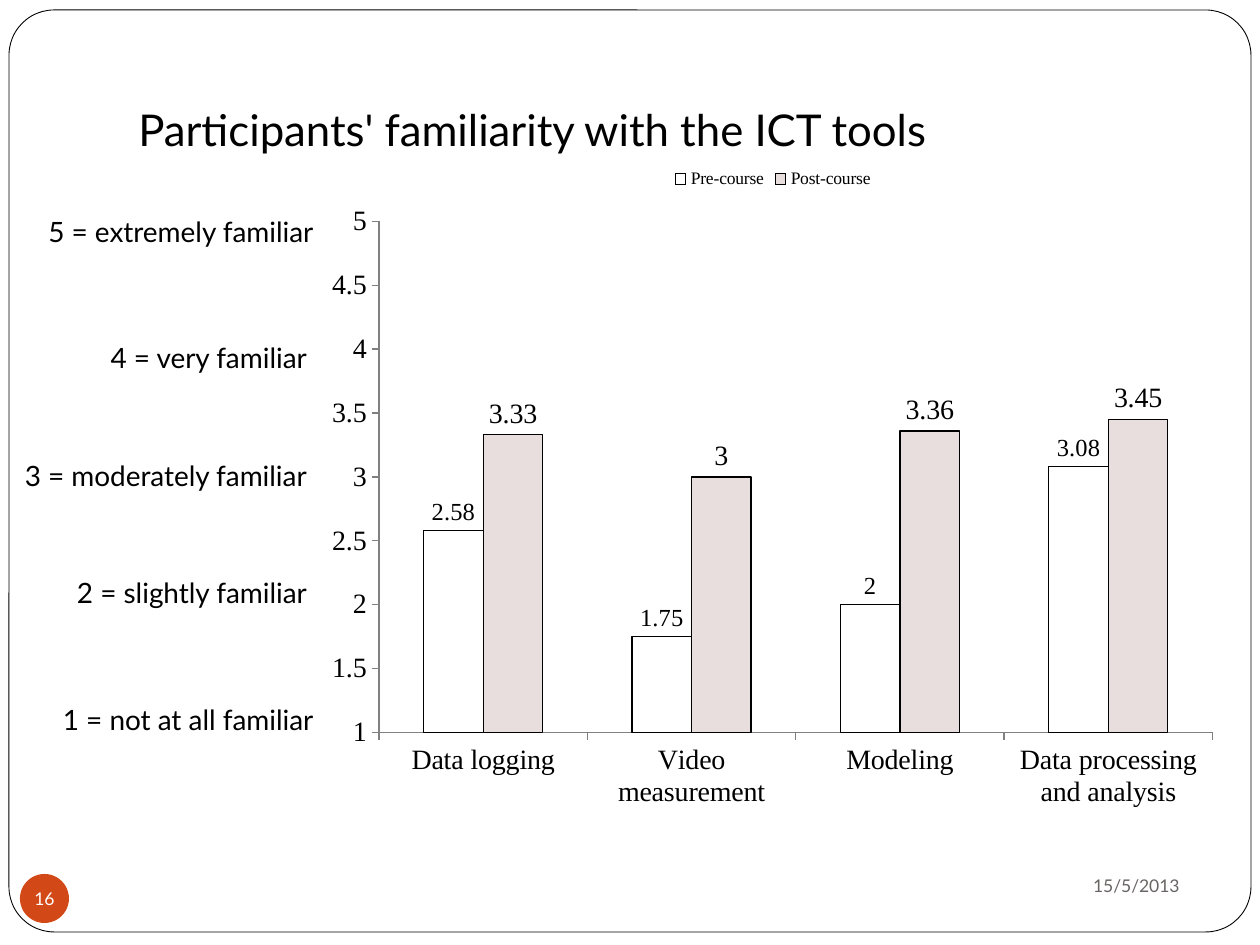
from pptx import Presentation
from pptx.chart.data import CategoryChartData
from pptx.dml.color import RGBColor
from pptx.enum.chart import (XL_CHART_TYPE as ChartType, XL_LABEL_POSITION as LabelPos,
                             XL_LEGEND_POSITION as LegendPos, XL_TICK_MARK as Tick)
from pptx.enum.shapes import MSO_SHAPE as Shape
from pptx.enum.text import MSO_ANCHOR as Anchor, PP_ALIGN as Align
from pptx.oxml import parse_xml
from pptx.oxml.ns import nsdecls, qn
from pptx.util import Emu, Pt

PX_PER_INCH = 126
BLACK = RGBColor(0, 0, 0)
WHITE = RGBColor(255, 255, 255)
GREY = RGBColor(0x69, 0x64, 0x64)
AXIS = RGBColor(0x80, 0x80, 0x80)
ORANGE = RGBColor(0xD3, 0x48, 0x17)
BLUSH = RGBColor(0xE8, 0xDE, 0xDE)
SANS, SERIF = "Lato", "Times New Roman"

CATEGORIES = ["Data logging", "Video measurement", "Modeling", "Data processing and analysis"]
# name, values, fill, label size
SERIES = [("Pre-course", (2.58, 1.75, 2, 3.08), WHITE, 14),
          ("Post-course", (3.33, 3, 3.36, 3.45), BLUSH, 16)]
# label, space before in points
SCALE = [("5 = extremely familiar", 0), ("4 = very familiar ", 53),
         ("3 = moderately familiar ", 48), ("2 = slightly familiar ", 48),
         ("1 = not at all familiar", 53)]


def px(n):
    return Emu(round(n * 914400 / PX_PER_INCH))


def set_font(font, size, color=BLACK, name=SANS):
    font.size, font.name = Pt(size), name
    font.color.rgb = color


def add_text(s, box, text, size, color=BLACK, align=Align.LEFT, anchor=Anchor.TOP):
    tf = s.shapes.add_textbox(*map(px, box)).text_frame
    tf.word_wrap = True
    tf.vertical_anchor = anchor
    tf.text = text
    for p in tf.paragraphs:
        p.alignment = align
        set_font(p.runs[0].font, size, color)
    return tf


def add_shape(s, kind, box, fill):
    sp = s.shapes.add_shape(kind, *map(px, box))
    sp.shadow.inherit = False
    sp.fill.solid()
    sp.fill.fore_color.rgb = fill
    return sp


def add_frame(s, box):
    sp = add_shape(s, Shape.ROUNDED_RECTANGLE, box, WHITE)
    sp.adjustments[0] = 0.049
    sp.line.color.rgb = BLACK
    sp.line.width = Pt(0.5)


def add_title(s, box):
    tf = add_text(s, box, "Participants' familiarity with the ICT tools", 25, anchor=Anchor.BOTTOM)
    tf.margin_bottom = px(13)


def add_footer(s, box):
    """Slide number badge at the left end, date at the right."""
    x, y, w, h = box
    sp = add_shape(s, Shape.OVAL, (x, y + 21, 49, 49), ORANGE)
    sp.line.fill.background()
    tf = sp.text_frame
    tf.margin_left = tf.margin_right = tf.margin_top = tf.margin_bottom = 0
    tf.word_wrap = False
    tf.vertical_anchor = Anchor.MIDDLE
    tf.text = "16"
    p = tf.paragraphs[0]
    p.alignment = Align.CENTER
    set_font(p.runs[0].font, 10, WHITE)
    add_text(s, (x + w - 341, y, 341, 66), "15/5/2013", 10, GREY, Align.RIGHT, Anchor.MIDDLE)


def add_scale(s, box):
    tf = add_text(s, box, "\n".join(label for label, _ in SCALE), 16, align=Align.RIGHT)
    for p, (_, gap) in zip(tf.paragraphs, SCALE):
        p.space_before = Pt(gap)


def place_plot(chart, **fractions):
    """Fix the inner plot area, as fractions of the chart's box."""
    area = chart.element.find(".//" + qn("c:plotArea"))
    for old in area.findall(qn("c:layout")):
        area.remove(old)
    sizes = "".join(f'<c:{k} val="{v}"/>' for k, v in fractions.items())
    area.insert(0, parse_xml(
        f'<c:layout {nsdecls("c")}><c:manualLayout><c:layoutTarget val="inner"/>'
        f'<c:xMode val="edge"/><c:yMode val="edge"/>{sizes}</c:manualLayout></c:layout>'))


def add_familiarity_chart(s, box):
    data = CategoryChartData()
    data.categories = CATEGORIES
    for name, values, *_ in SERIES:
        data.add_series(name, values)
    chart = s.shapes.add_chart(ChartType.COLUMN_CLUSTERED, *map(px, box), data).chart
    set_font(chart.font, 10, name=SERIF)
    chart.has_title = False
    chart.has_legend = True
    chart.legend.position = LegendPos.TOP
    chart.legend.include_in_layout = False

    for axis in (chart.category_axis, chart.value_axis):
        axis.has_major_gridlines = False
        axis.major_tick_mark, axis.minor_tick_mark = Tick.OUTSIDE, Tick.NONE
        axis.format.line.color.rgb = AXIS
        set_font(axis.tick_labels.font, 16, name=SERIF)
    value_axis = chart.value_axis
    value_axis.minimum_scale, value_axis.maximum_scale = 1, 5
    value_axis.major_unit = 0.5

    plot = chart.plots[0]
    plot.gap_width, plot.overlap = 150, 0
    plot.vary_by_categories = False
    for series, (_, _, fill, size) in zip(plot.series, SERIES):
        series.invert_if_negative = False
        series.format.fill.solid()
        series.format.fill.fore_color.rgb = fill
        series.format.line.color.rgb = BLACK
        series.format.line.width = Pt(0.75)
        labels = series.data_labels
        labels.show_value = True
        labels.position = LabelPos.OUTSIDE_END
        set_font(labels.font, size, name=SERIF)
    place_plot(chart, x=0.07, y=0.1, w=0.91, h=0.77)


def main():
    prs = Presentation()
    prs.slide_width, prs.slide_height = px(1260), px(945)
    s = prs.slides.add_slide(prs.slide_layouts[6])
    add_frame(s, (9, 10, 1242, 922))
    add_title(s, (126, 10, 1071, 158))
    add_footer(s, (20, 853, 1172, 70))
    add_familiarity_chart(s, (315, 155, 916, 664))
    add_scale(s, (-10, 208, 336, 538))
    prs.save("out.pptx")


if __name__ == "__main__":
    main()
